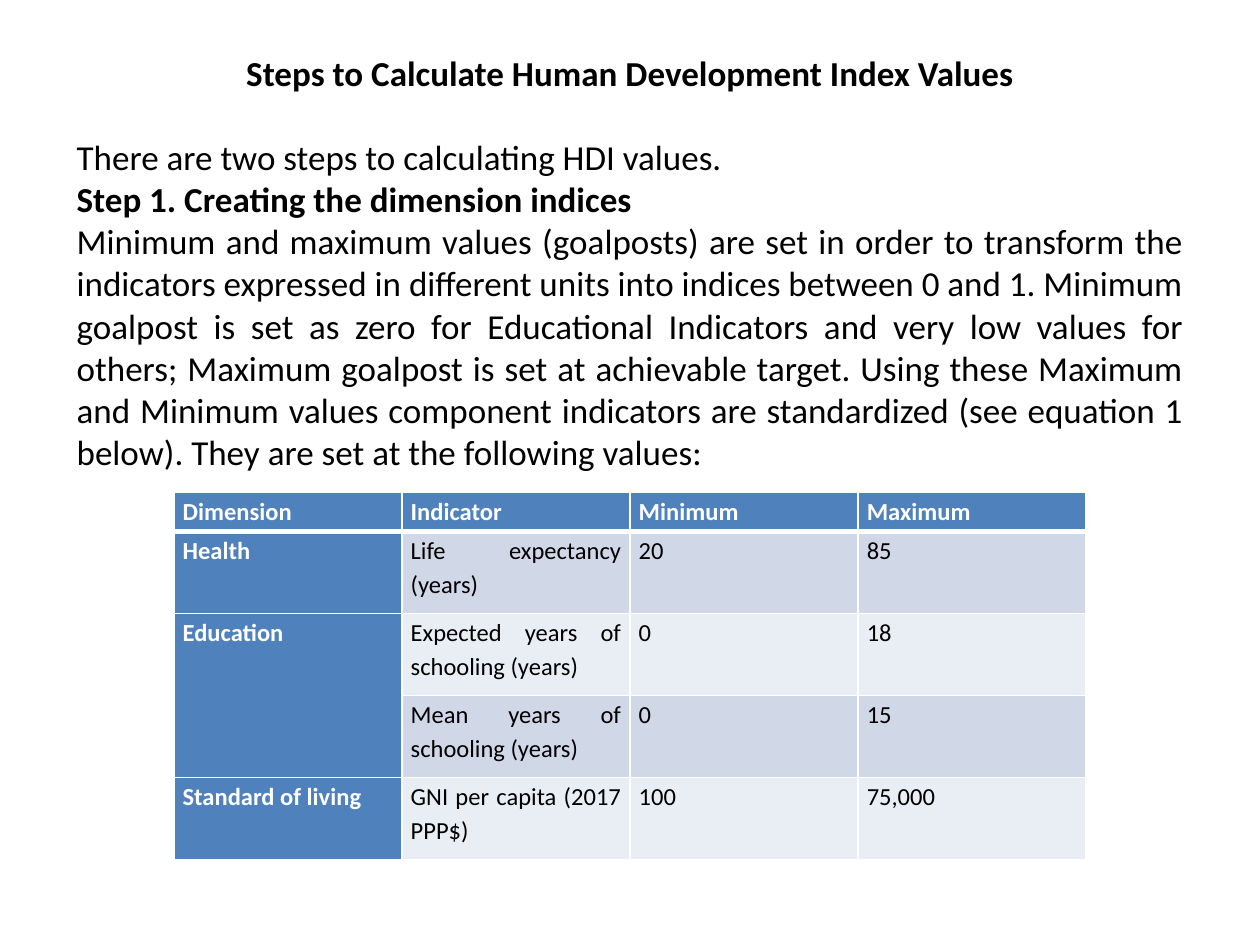
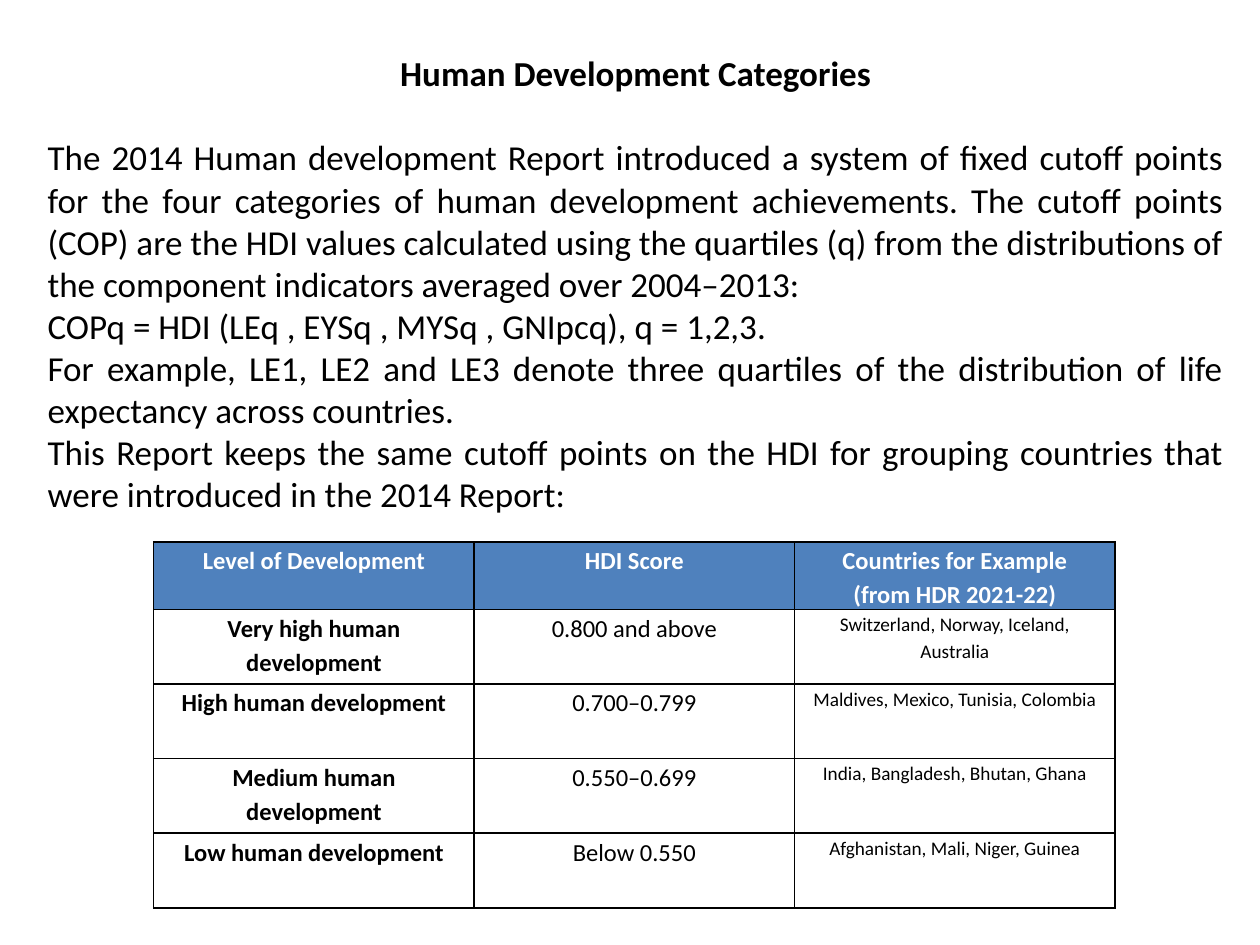
import pptx
import pptx.dml.color
import pptx.enum.text
import pptx.oxml
import pptx.oxml.ns
import pptx.util
from pptx.util import Inches

COLORS = {
    "paper": "FFFFFF",
    "ink": "000000",
    "accent": "4F81BD",
    "band_dark": "D0D8E8",
    "band_light": "E9EDF4",
}
FONT = "Calibri"
ALIGN = pptx.enum.text.PP_ALIGN
TOP = pptx.enum.text.MSO_ANCHOR.TOP
LINE_PITCH = 0.335

GOALPOSTS = [
    ["Dimension", "Indicator", "Minimum", "Maximum"],
    ["Health", "Life expectancy (years)", "20", "85"],
    ["Education", "Expected years of schooling (years)", "0", "18"],
    ["", "Mean years of schooling (years)", "0", "15"],
    ["Standard of living", "GNI per capita (2017 PPP$)", "100", "75,000"],
]
CATEGORIES = [
    ["Level of Development", "HDI Score", "Countries for Example\n(from HDR 2021-22)"],
    ["Very high human development", "0.800 and above", "Switzerland, Norway, Iceland, Australia"],
    ["High human development", "0.700–0.799", "Maldives, Mexico, Tunisia, Colombia"],
    ["Medium human development", "0.550–0.699", "India, Bangladesh, Bhutan, Ghana"],
    ["Low human development", "Below 0.550", "Afghanistan, Mali, Niger, Guinea"],
]
STEP_HEADING = "Step 1. Creating the dimension indices"
STEPS_TEXT = [
    "There are two steps to calculating HDI values.",
    STEP_HEADING,
    "Minimum and maximum values (goalposts) are set in order to transform the "
    "indicators expressed in different units into indices between 0 and 1. Minimum "
    "goalpost is set as zero for Educational Indicators and very low values for "
    "others; Maximum goalpost is set at achievable target. Using these Maximum and "
    "Minimum values component indicators are standardized (see equation 1 below). "
    "They are set at the following values:",
]
CATEGORIES_TEXT = [
    "The 2014 Human development Report introduced a system of fixed cutoff points "
    "for the four categories of human development achievements. The cutoff points "
    "(COP) are the HDI values calculated using the quartiles (q) from the "
    "distributions of the component indicators averaged over 2004–2013:",
    "COPq = HDI (LEq , EYSq , MYSq , GNIpcq), q = 1,2,3.",
    "For example, LE1, LE2 and LE3 denote three quartiles of the distribution of "
    "life expectancy across countries.",
    "This Report keeps the same cutoff points on the HDI for grouping countries "
    "that were introduced in the 2014 Report:",
]


def rgb(name):
    """Return the named colour."""
    return pptx.dml.color.RGBColor.from_string(COLORS[name])


def format_paragraph(paragraph, align, size, color="ink", bold=False):
    """Align a paragraph and style its runs."""
    paragraph.alignment = align
    for run in paragraph.runs:
        run.font.name = FONT
        run.font.size = pptx.util.Pt(size)
        run.font.bold = bold
        run.font.color.rgb = rgb(color)


def add_heading_and_body(slide, box, title, paragraphs):
    """Place the title and, two lines below its top, the body text in a box."""
    left, top, width, height = box
    offset = 2 * LINE_PITCH
    heading = slide.shapes.title
    heading.left, heading.top = Inches(left), Inches(top)
    heading.width, heading.height = Inches(width), Inches(0.44)
    heading.text_frame.text = title
    heading.text_frame.vertical_anchor = TOP
    heading.text_frame.auto_size = pptx.enum.text.MSO_AUTO_SIZE.NONE
    format_paragraph(heading.text_frame.paragraphs[0], ALIGN.CENTER, 20, bold=True)

    body = slide.shapes.add_textbox(
        Inches(left), Inches(top + offset), Inches(width), Inches(height - offset)
    ).text_frame
    body.word_wrap = True
    body.text = "\n".join(paragraphs)
    for paragraph in body.paragraphs:
        format_paragraph(paragraph, ALIGN.JUSTIFY, 20, bold=paragraph.text == STEP_HEADING)


def set_borders(cell, color, widths):
    """Draw the left, right, top and bottom borders of a cell, in points."""
    properties = cell._tc.get_or_add_tcPr()
    for side, width in zip("LRTB", widths):
        properties.append(pptx.oxml.parse_xml(
            f'<a:ln{side} {pptx.oxml.ns.nsdecls("a")} w="{pptx.util.Pt(width)}">'
            f'<a:solidFill><a:srgbClr val="{COLORS[color]}"/></a:solidFill></a:ln{side}>'
        ))


def format_cell(cell, text, align, size, color, bold, fill):
    """Fill a cell with styled text and a background."""
    cell.margin_left = cell.margin_right = Inches(0.07)
    cell.margin_top = cell.margin_bottom = 0
    cell.vertical_anchor = TOP
    cell.text_frame.text = text
    for paragraph in cell.text_frame.paragraphs:
        paragraph.line_spacing = 1.15
        format_paragraph(paragraph, align, size, color, bold)
    cell.fill.solid()
    cell.fill.fore_color.rgb = rgb(fill)


def add_plain_table(slide, box, rows, header_height):
    """Add a table with equal columns, a header row and equal body rows."""
    left, top, width, height = box
    table = slide.shapes.add_table(
        len(rows), len(rows[0]), Inches(left), Inches(top), Inches(width), Inches(height)
    ).table
    table.first_row = table.horz_banding = False
    for column in table.columns:
        column.width = Inches(width / len(rows[0]))
    for index, row in enumerate(table.rows):
        row.height = Inches((height - header_height) / (len(rows) - 1) if index else header_height)
    return table


def add_goalposts_table(slide, box):
    """Add the banded table of minimum and maximum values."""
    table = add_plain_table(slide, box, GOALPOSTS, 0.31)
    for r, row in enumerate(GOALPOSTS):
        for c, text in enumerate(row):
            label = r == 0 or c == 0
            band = "band_dark" if r % 2 else "band_light"
            cell = table.cell(r, c)
            set_borders(cell, "paper", [1, 1, 3 if r == 1 else 1, 3 if r == 0 else 1])
            format_cell(cell, text, ALIGN.JUSTIFY, 14, "paper" if label else "ink",
                        label, "accent" if label else band)
    table.cell(2, 0).merge(table.cell(3, 0))


def add_categories_table(slide, box):
    """Add the ruled table of development levels."""
    table = add_plain_table(slide, box, CATEGORIES, 0.53)
    for r, row in enumerate(CATEGORIES):
        for c, text in enumerate(row):
            header = r == 0
            cell = table.cell(r, c)
            set_borders(cell, "ink", [1] * 4)
            format_cell(cell, text, ALIGN.CENTER, 11 if c == 2 and not header else 14,
                        "paper" if header else "ink", header or c == 0,
                        "accent" if header else "paper")


def main():
    """Build and save both slides."""
    deck = pptx.Presentation()
    deck.slide_width, deck.slide_height = Inches(10), Inches(7.5)
    title_only = deck.slide_layouts[5]

    steps = deck.slides.add_slide(title_only)
    add_heading_and_body(steps, (0.51, 0.36, 8.98, 3.44),
                         "Steps to Calculate Human Development Index Values", STEPS_TEXT)
    add_goalposts_table(steps, (1.38, 3.91, 7.24, 2.91))

    categories = deck.slides.add_slide(title_only)
    add_heading_and_body(categories, (0.28, 0.36, 9.53, 3.78),
                         "Human Development Categories", CATEGORIES_TEXT)
    add_categories_table(categories, (1.22, 4.3, 7.63, 2.9))

    deck.save("out.pptx")


if __name__ == "__main__":
    main()
